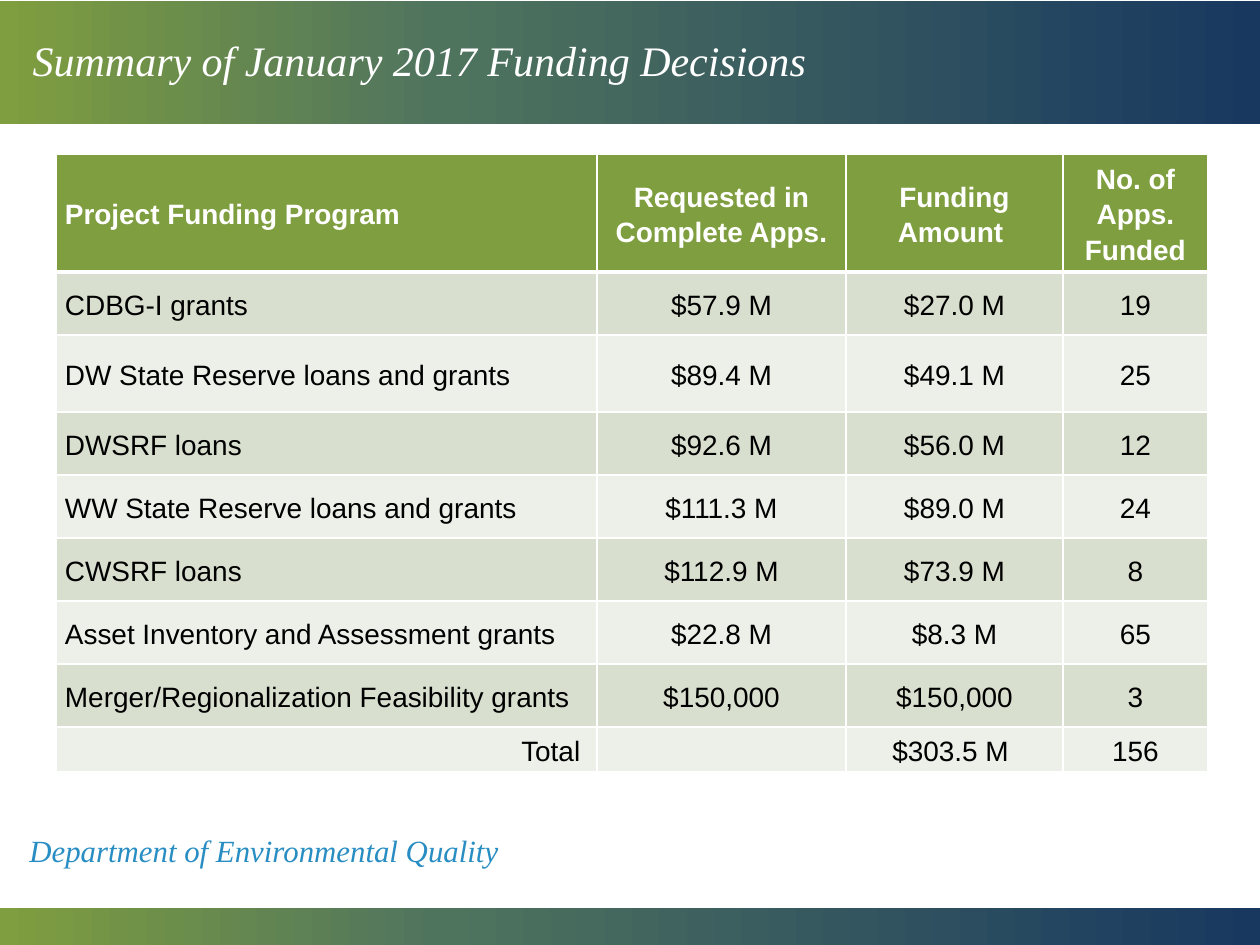
from copy import deepcopy

from lxml import etree
from pptx import Presentation
from pptx import util as u
from pptx.dml.color import RGBColor
from pptx.enum import shapes, text
from pptx.oxml.ns import qn

PX = u.Inches(1) / 126
GREEN = RGBColor(0x7F, 0x9E, 0x3F)
TEAL = RGBColor(0x4F, 0x74, 0x5E)
NAVY = RGBColor(0x18, 0x38, 0x60)
BLUE = RGBColor(0x28, 0x8D, 0xC2)
DARK_ROW = RGBColor(0xD8, 0xDF, 0xCF)
LIGHT_ROW = RGBColor(0xEC, 0xF0, 0xE8)
WHITE = RGBColor(0xFF, 0xFF, 0xFF)
BLACK = RGBColor(0, 0, 0)
LEFT, CENTER, RIGHT = text.PP_ALIGN.LEFT, text.PP_ALIGN.CENTER, text.PP_ALIGN.RIGHT

COLUMN_WIDTHS = [541, 249, 217, 145]
ROW_HEIGHTS = [118, 63, 77, 63, 63, 63, 63, 63, 45]
ROWS = [
    ("Project Funding Program", "Requested in Complete Apps.", "Funding Amount ", "No. of Apps. Funded"),
    ("CDBG-I grants", "$57.9 M", "$27.0 M", "19"),
    ("DW State Reserve loans and grants", "$89.4 M", "$49.1 M", "25"),
    ("DWSRF loans", "$92.6 M", "$56.0 M", "12"),
    ("WW State Reserve loans and grants", "$111.3 M", "$89.0 M", "24"),
    ("CWSRF loans", "$112.9 M", "$73.9 M", "8"),
    ("Asset Inventory and Assessment grants", "$22.8 M", "$8.3 M", "65"),
    ("Merger/Regionalization Feasibility grants", "$150,000", "$150,000", "3"),
    ("Total ", "", "$303.5 M ", "156"),
]


def px(length):
    return u.Emu(round(length * PX))


def add_band(slide, top, height):
    """Add a full-width bar with the three-colour gradient."""
    band = slide.shapes.add_shape(
        shapes.MSO_SHAPE.RECTANGLE, 0, px(top), px(1260), px(height))
    band.shadow.inherit = False
    band.line.fill.background()
    band.fill.gradient()
    band.fill.gradient_angle = 0
    stop_list = next(band.element.iter(qn("a:gsLst")))
    stop_list.insert(1, deepcopy(stop_list[0]))
    stops = zip(band.fill.gradient_stops, (0, 0.35, 1), (GREEN, TEAL, NAVY))
    for stop, position, color in stops:
        stop.position = position
        stop.color.rgb = color


def write(frame, words, font_name, size, color, align=LEFT, spacing=0.9,
          bold=False, italic=False):
    paragraph = frame.paragraphs[0]
    paragraph.alignment = align
    paragraph.line_spacing = spacing
    if words:
        run = paragraph.add_run()
        run.text = words
        font = run.font
        font.name, font.size = font_name, u.Pt(size)
        font.bold, font.italic = bold, italic
        font.color.rgb = color


def write_heading(shape, box, words, size, color):
    """Place a shape and give it one line of italic serif text."""
    shape.left, shape.top, shape.width, shape.height = map(px, box)
    frame = shape.text_frame
    frame.word_wrap = True
    frame.auto_size = text.MSO_AUTO_SIZE.NONE
    frame.vertical_anchor = text.MSO_ANCHOR.MIDDLE
    write(frame, words, "Times New Roman", size, color, italic=True)


def add_borders(cell, bottom_width):
    properties = cell._tc.get_or_add_tcPr()
    for side, width in (("L", 1), ("R", 1), ("T", 1), ("B", bottom_width)):
        line = etree.SubElement(properties, qn(f"a:ln{side}"), w=str(u.Pt(width)))
        fill = etree.SubElement(line, qn("a:solidFill"))
        etree.SubElement(fill, qn("a:srgbClr"), val=str(WHITE))


def format_cell(cell, words, row, column):
    header = row == 0
    add_borders(cell, 3 if header else 1)
    cell.fill.solid()
    cell.fill.fore_color.rgb = GREEN if header else DARK_ROW if row % 2 else LIGHT_ROW
    cell.vertical_anchor = text.MSO_ANCHOR.MIDDLE
    cell.margin_left = cell.margin_right = px(9)
    cell.margin_top = cell.margin_bottom = 0
    last = row == len(ROWS) - 1
    align = CENTER if column else RIGHT if last else LEFT
    write(cell.text_frame, words, "Arial", 16, WHITE if header else BLACK,
          align, 1.15, bold=header)


def add_funding_table(slide):
    table = slide.shapes.add_table(
        len(ROWS), len(COLUMN_WIDTHS), px(56), px(154),
        px(sum(COLUMN_WIDTHS)), px(sum(ROW_HEIGHTS))).table
    for column, width in zip(table.columns, COLUMN_WIDTHS):
        column.width = px(width)
    for row, height in zip(table.rows, ROW_HEIGHTS):
        row.height = px(height)
    for r, values in enumerate(ROWS):
        for c, words in enumerate(values):
            format_cell(table.cell(r, c), words, r, c)


def main():
    presentation = Presentation()
    presentation.slide_width, presentation.slide_height = px(1260), px(945)
    slide = presentation.slides.add_slide(presentation.slide_layouts[5])
    add_band(slide, 908, 37)
    add_band(slide, 1, 123)
    title = slide.shapes.title
    slide.shapes.element.append(title.element)  # in front of the bands
    write_heading(title, (20, 1, 1221, 123),
                  "Summary of January 2017 Funding Decisions", 24, WHITE)
    department = slide.shapes.add_textbox(0, 0, 0, 0)
    write_heading(department, (17, 827, 517, 52),
                  "Department of Environmental Quality", 17.6, BLUE)
    add_funding_table(slide)
    presentation.save("out.pptx")


if __name__ == "__main__":
    main()
